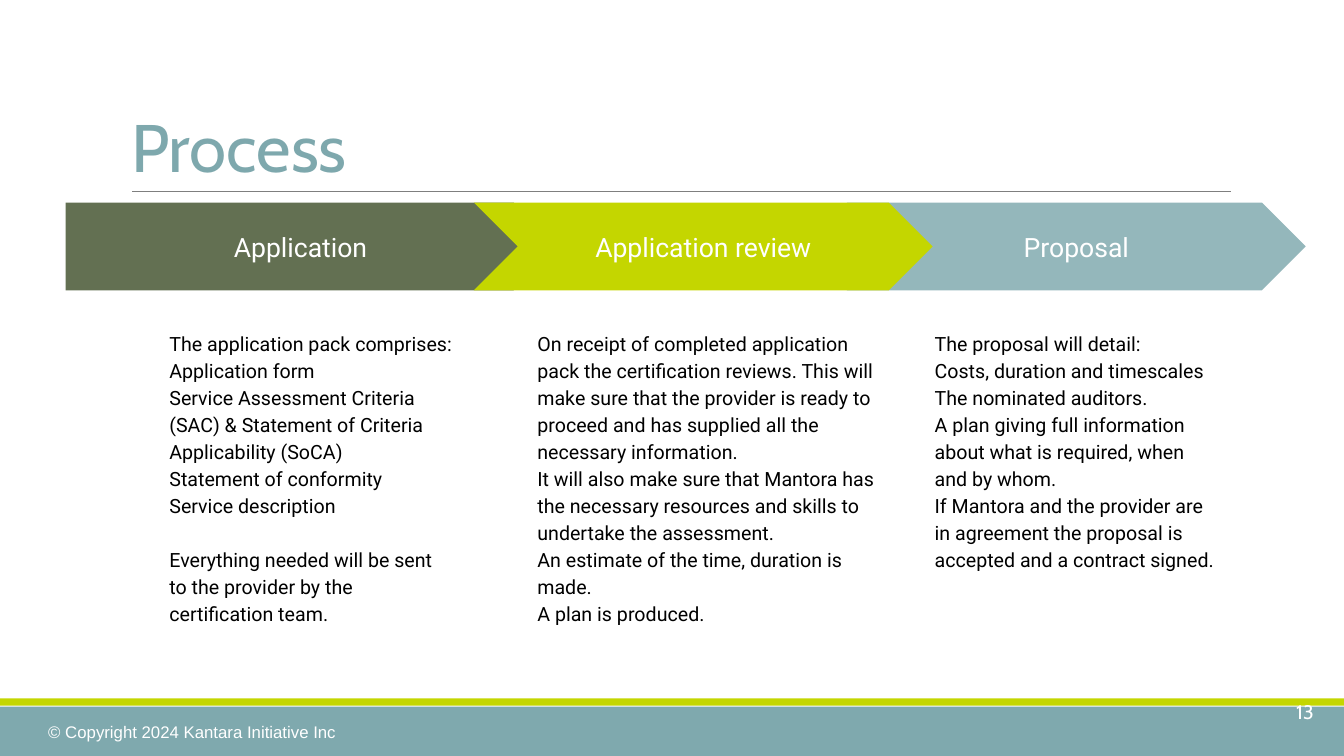
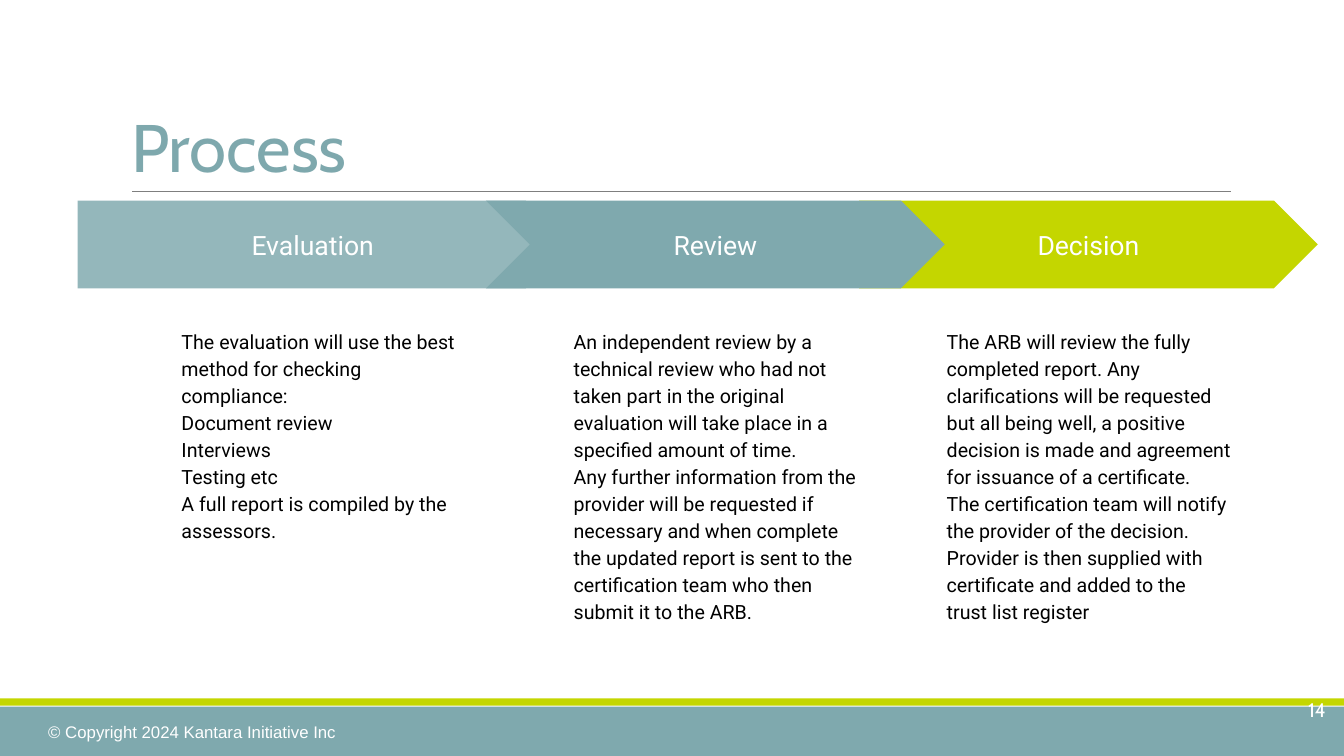
"""Build two process slides with arrow steps and notes."""
from dataclasses import dataclass

from lxml import etree
from pptx import Presentation
from pptx.dml.color import RGBColor
from pptx.enum.shapes import MSO_CONNECTOR, MSO_SHAPE
from pptx.enum.text import MSO_ANCHOR, MSO_AUTO_SIZE, PP_ALIGN
from pptx.oxml.ns import qn
from pptx.shapes.autoshape import Shape
from pptx.slide import Slide
from pptx.text.text import TextFrame
from pptx.util import Inches, Pt

RECT, PLATE, ARROW = MSO_SHAPE.RECTANGLE, MSO_SHAPE.PENTAGON, MSO_SHAPE.CHEVRON
LINE = MSO_CONNECTOR.STRAIGHT
TOP, MID, LOW = MSO_ANCHOR.TOP, MSO_ANCHOR.MIDDLE, MSO_ANCHOR.BOTTOM
LEFT, MIDDLE, RIGHT = PP_ALIGN.LEFT, PP_ALIGN.CENTER, PP_ALIGN.RIGHT
FIXED = MSO_AUTO_SIZE.NONE

TEAL, PALE, LIME, OLIVE = "7FA9AE", "94B7BB", "C4D600", "637052"
TITLE, GREY, WHITE, BLACK = "7EA8AD", "7F7F7F", "FFFFFF", "000000"
HEAD, BODY, FOOT = "Cabin", "Roboto", "Arial"

WIDE, TALL = 13.33, 7.5
BAR_X, BAR_Y, BAR_H = 0.65, 2.01, 0.87
FIRST_W, NEXT_W = 4.88, 4.55
NEXT_X, PITCH = 4.7, 3.7
NOTE_Y, NOTE_W, NOTE_H = 3.13, 3.08, 3.4
LINE_GAP = 19.3


@dataclass(frozen=True)
class Style:
    """Look of the text in one box."""
    font: str
    size: float
    color: str
    align: PP_ALIGN = LEFT
    anchor: MSO_ANCHOR = TOP
    space: float = 1.0
    pad: tuple[float, float] = (0.1, 0.05)


@dataclass(frozen=True)
class Step:
    """One arrow and the note below it."""
    label: str
    fill: str
    notes: tuple[str, ...]
    indent: float = 0.74
    width: float = NOTE_W
    gap: int = 0


@dataclass(frozen=True)
class Page:
    """One slide: number, offset of its content and steps."""
    number: int
    dx: float
    dy: float
    steps: tuple[Step, ...]


TITLE_STYLE = Style(HEAD, 48, TITLE, anchor=LOW, space=0.85)
COPY_STYLE = Style(FOOT, 12, WHITE)
PAGE_STYLE = Style(HEAD, 14, WHITE, RIGHT, MID)
LABEL_STYLE = Style(BODY, 19, WHITE, MIDDLE, MID, pad=(0.13, 0.13))
NOTE_STYLE = Style(BODY, 14, BLACK, space=1.15, pad=(0.13, 0.13))

PAGES = (
    Page(13, 0, 0, (
        Step("Application", OLIVE, (
            "The application pack comprises:",
            "Application form",
            "Service Assessment Criteria (SAC) & Statement of Criteria "
            "Applicability (SoCA)",
            "Statement of conformity",
            "Service description",
            "Everything needed will be sent to the provider by the "
            "certification team.",
        ), indent=0.9, gap=5),
        Step("Application review", LIME, (
            "On receipt of completed application pack the certification "
            "reviews. This will make sure that the provider is ready to "
            "proceed and has supplied all the necessary information.",
            "It will also make sure that Mantora has the necessary resources "
            "and skills to undertake the assessment.",
            "An estimate of the time, duration is made.",
            "A plan is produced.",
        ), indent=0.5, width=3.63),
        Step("Proposal", PALE, (
            "The proposal will detail:",
            "Costs, duration and timescales",
            "The nominated auditors.",
            "A plan giving full information about what is required, when "
            "and by whom.",
            "If Mantora and the provider are in agreement the proposal is "
            "accepted and a contract signed.",
        )),
    )),
    Page(14, 0.12, -0.02, (
        Step("Evaluation", PALE, (
            "The evaluation will use the best method for checking "
            "compliance:",
            "Document review",
            "Interviews",
            "Testing etc",
            "A full report is compiled by the assessors.",
        ), indent=0.9),
        Step("Review", TEAL, (
            "An independent review by a technical review who had not taken "
            "part in the original evaluation will take place in a specified "
            "amount of time.",
            "Any further information from the provider will be requested if "
            "necessary and when complete the updated report is sent to the "
            "certification team who then submit it to the ARB.",
        )),
        Step("Decision", LIME, (
            "The ARB will review the fully completed report. Any "
            "clarifications will be requested but all being well, a positive "
            "decision is made and agreement for issuance of a certificate.",
            "The certification team will notify the provider of the "
            "decision.",
            "Provider is then supplied with certificate and added to the "
            "trust list register",
        )),
    )),
)


def rgb(color: str) -> RGBColor:
    """Turn a hex string into a colour."""
    return RGBColor.from_string(color)


def write(frame: TextFrame, lines: tuple[str, ...], style: Style,
          gap: int = 0) -> None:
    """Fill a frame, with a line of space before paragraph gap."""
    frame.word_wrap = True
    frame.auto_size = FIXED
    frame.vertical_anchor = style.anchor
    frame.margin_left = frame.margin_right = Inches(style.pad[0])
    frame.margin_top = frame.margin_bottom = Inches(style.pad[1])
    for index, line in enumerate(lines):
        para = frame.add_paragraph() if index else frame.paragraphs[0]
        para.alignment = style.align
        para.line_spacing = style.space
        if gap and index == gap:
            para.space_before = Pt(LINE_GAP)
        run = para.add_run()
        run.text = line
        run.font.name = style.font
        run.font.size = Pt(style.size)
        run.font.color.rgb = rgb(style.color)


def block(slide: Slide, kind: MSO_SHAPE, x: float, y: float, w: float,
          h: float, fill: str) -> Shape:
    """Draw a flat filled shape."""
    shape = slide.shapes.add_shape(
        kind, Inches(x), Inches(y), Inches(w), Inches(h))
    shape.shadow.inherit = False
    shape.fill.solid()
    shape.fill.fore_color.rgb = rgb(fill)
    shape.line.fill.background()
    return shape


def label(slide: Slide, x: float, y: float, w: float, h: float,
          lines: tuple[str, ...], style: Style, gap: int = 0) -> None:
    """Add a text box."""
    box = slide.shapes.add_textbox(
        Inches(x), Inches(y), Inches(w), Inches(h))
    write(box.text_frame, lines, style, gap)


def frame_page(slide: Slide, title: str) -> None:
    """Draw the bands, rule, footer and title that slides share."""
    block(slide, RECT, 0, 7.01, WIDE, TALL - 7.01, TEAL)
    block(slide, RECT, 0, 6.93, WIDE, 0.07, LIME)
    rule = slide.shapes.add_connector(
        LINE, Inches(1.31), Inches(1.9), Inches(12.21), Inches(1.9))
    rule.line.color.rgb = rgb(GREY)
    rule.line.width = Pt(0.75)
    etree.SubElement(rule.element.spPr, qn("a:effectLst"))
    label(slide, 0.38, 7.11, 4.12, 0.54,
          ("© Copyright 2024 Kantara Initiative Inc",), COPY_STYLE)
    head = slide.shapes.title
    head.left, head.top = Inches(1.2), Inches(0.31)
    head.width, head.height = Inches(11), Inches(1.59)
    write(head.text_frame, (title,), TITLE_STYLE)


def draw_step(slide: Slide, page: Page, index: int) -> None:
    """Draw one arrow with its note."""
    step = page.steps[index]
    kind, x, w = PLATE, BAR_X, FIRST_W
    if index:
        kind, x, w = ARROW, NEXT_X + (index - 1) * PITCH, NEXT_W
    x += page.dx
    bar = block(slide, kind, x, BAR_Y + page.dy, w, BAR_H, step.fill)
    bar.adjustments[0] = 0.5
    write(bar.text_frame, (step.label,), LABEL_STYLE)
    label(slide, x + step.indent, NOTE_Y + page.dy, step.width, NOTE_H,
          step.notes, NOTE_STYLE, step.gap)


def main() -> None:
    """Build and save the deck."""
    deck = Presentation()
    deck.slide_width, deck.slide_height = Inches(WIDE), Inches(TALL)
    for page in PAGES:
        slide = deck.slides.add_slide(deck.slide_layouts[5])
        frame_page(slide, "Process")
        label(slide, 10.02 + page.dx, 6.88 + page.dy, 3.11, 0.37,
              (str(page.number),), PAGE_STYLE)
        for index in (2, 0, 1):
            draw_step(slide, page, index)
    deck.save("out.pptx")


if __name__ == "__main__":
    main()
